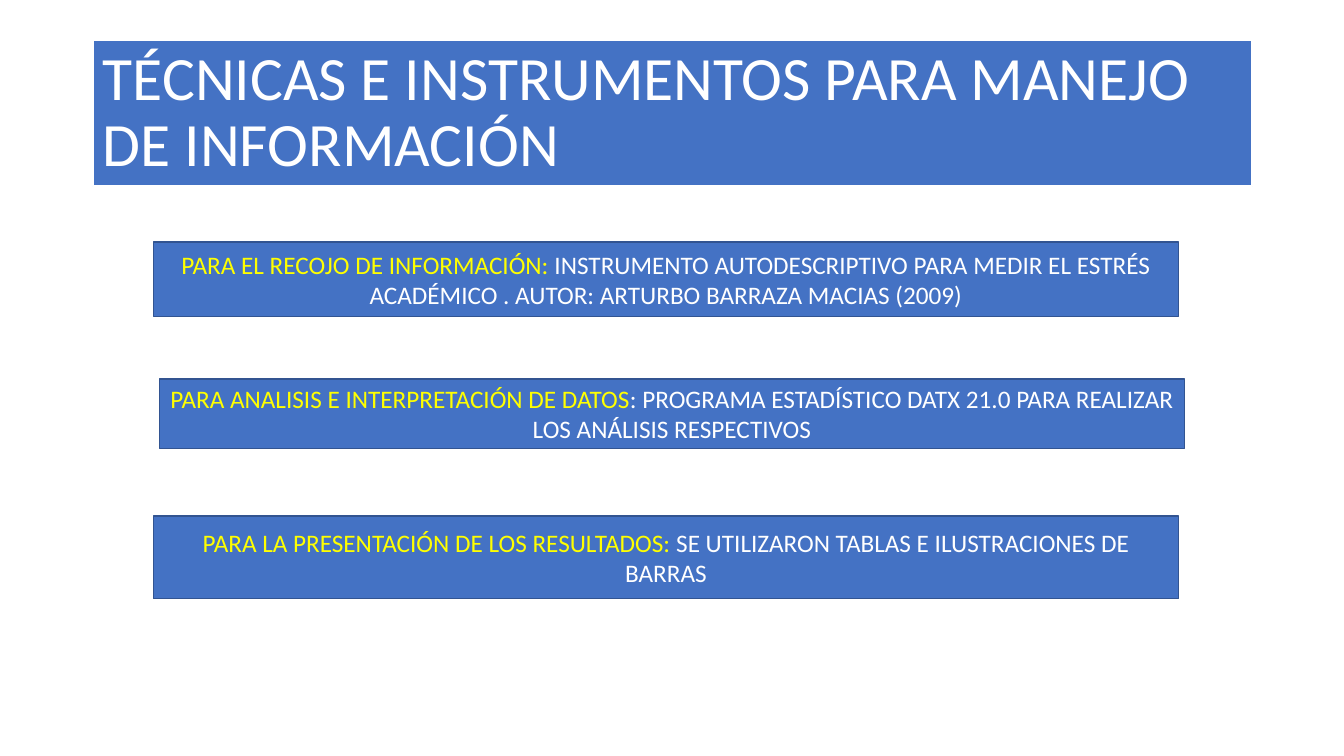
"""Build the slide on techniques and instruments for handling information."""
from pptx import Presentation
from pptx.dml.color import RGBColor
from pptx.enum.shapes import MSO_SHAPE
from pptx.enum.text import MSO_ANCHOR, MSO_AUTO_SIZE, PP_ALIGN
from pptx.util import Inches, Pt

RECTANGLE = MSO_SHAPE.RECTANGLE
MIDDLE = MSO_ANCHOR.MIDDLE
NO_AUTOFIT = MSO_AUTO_SIZE.NONE
LEFT, CENTER = PP_ALIGN.LEFT, PP_ALIGN.CENTER
BLUE, DARK_BLUE, YELLOW, WHITE = "4472C4", "325491", "FFFF00", "FFFFFF"
TITLE_ONLY = 5


def color(hex_value):
    return RGBColor.from_string(hex_value)


def style_box(shape, line_color, line_width, alignment, size, run_colors):
    shape.fill.solid()
    shape.fill.fore_color.rgb = color(BLUE)
    shape.line.color.rgb = color(line_color)
    shape.line.width = Pt(line_width)
    text_frame = shape.text_frame
    text_frame.word_wrap = True
    text_frame.auto_size = NO_AUTOFIT
    text_frame.vertical_anchor = MIDDLE
    paragraph = text_frame.paragraphs[0]
    paragraph.alignment = alignment
    for run, run_color in zip(paragraph.runs, run_colors):
        run.font.name = "Calibri"
        run.font.size = Pt(size)
        run.font.color.rgb = color(run_color)


presentation = Presentation()
presentation.slide_width = Inches(13.33)
presentation.slide_height = Inches(7.5)
slide = presentation.slides.add_slide(presentation.slide_layouts[TITLE_ONLY])

title = slide.shapes.title
title.left, title.top = Inches(0.92), Inches(0.4)
title.width, title.height = Inches(11.5), Inches(1.45)
title.text_frame.text = "TÉCNICAS E INSTRUMENTOS PARA MANEJO DE INFORMACIÓN"
title.text_frame.paragraphs[0].line_spacing = 0.9
style_box(title, WHITE, 1.5, LEFT, 44, [WHITE])

techniques = [
    (1.52, 2.4, 0.74, "PARA EL RECOJO DE INFORMACIÓN:",
     " INSTRUMENTO AUTODESCRIPTIVO PARA MEDIR EL ESTRÉS ACADÉMICO . "
     "AUTOR: ARTURBO BARRAZA MACIAS (2009)"),
    (1.58, 3.76, 0.69, "PARA ANALISIS E INTERPRETACIÓN DE DATOS",
     ": PROGRAMA ESTADÍSTICO DATX 21.0 PARA REALIZAR LOS ANÁLISIS RESPECTIVOS"),
    (1.52, 5.12, 0.82, "PARA LA PRESENTACIÓN DE LOS RESULTADOS:",
     " SE UTILIZARON TABLAS E ILUSTRACIONES DE BARRAS"),
]
for left, top, height, purpose, description in techniques:
    box = slide.shapes.add_shape(
        RECTANGLE, Inches(left), Inches(top), Inches(10.17), Inches(height))
    box.shadow.inherit = False
    paragraph = box.text_frame.paragraphs[0]
    for text in (purpose, description):
        paragraph.add_run().text = text
    style_box(box, DARK_BLUE, 1, CENTER, 18, [YELLOW, WHITE])

presentation.save("out.pptx")
